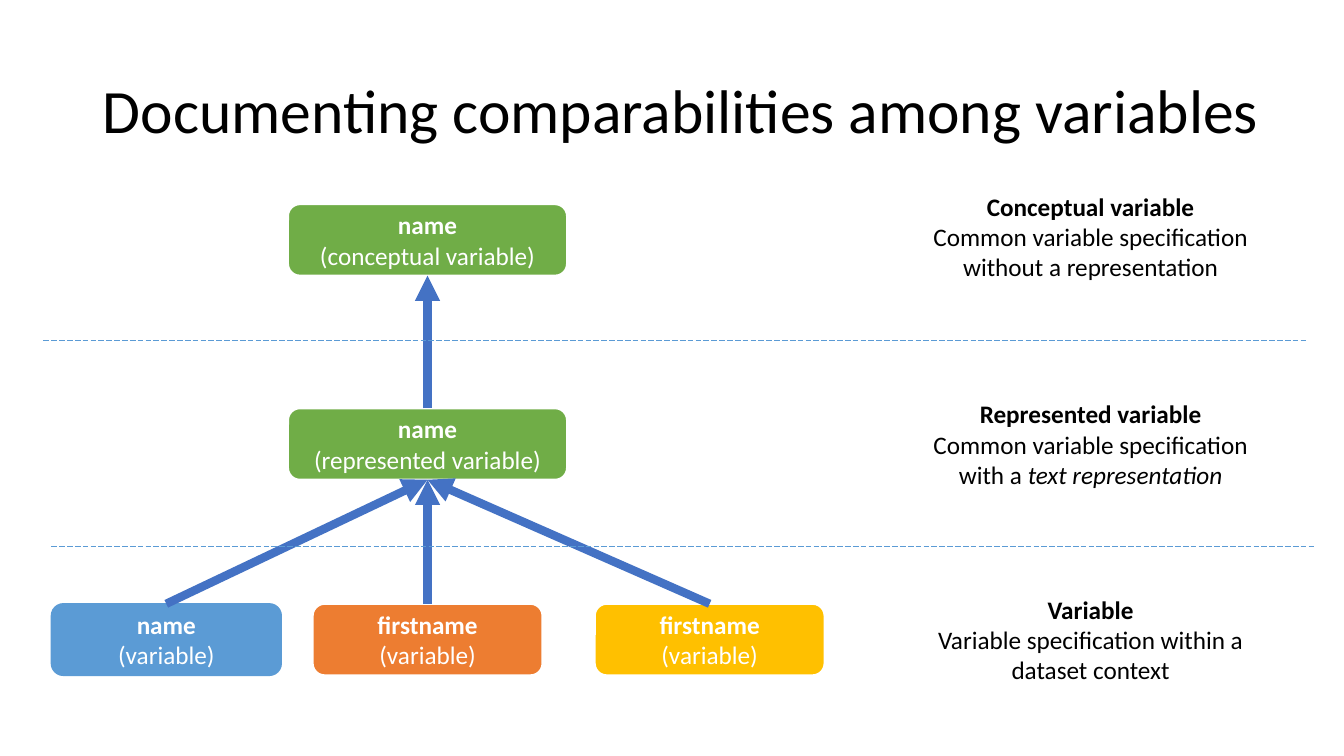
import pptx
import pptx.util
import pptx.dml.color
import pptx.enum.dml
import pptx.enum.shapes
import pptx.enum.text
import pptx.oxml.ns
import lxml.etree

Pt = pptx.util.Pt
CENTER = pptx.enum.text.PP_ALIGN.CENTER
MIDDLE = pptx.enum.text.MSO_ANCHOR.MIDDLE
TOP, BOTTOM = 0, 2
BOX_HEIGHT = 51.1
MAIN_CENTER = 305.4
VARIABLE_WIDTH = 164.2


def color(hex_string):
    return pptx.dml.color.RGBColor.from_string(hex_string)


def set_font(paragraph, size, hex_color):
    paragraph.font.name = "Calibri"
    paragraph.font.size = Pt(size)
    paragraph.font.color.rgb = color(hex_color)


def add_title(slide, text):
    title = slide.shapes.title
    title.left, title.top = Pt(66.2), Pt(28.8)
    title.width, title.height = Pt(853.2), Pt(104.4)
    frame = title.text_frame
    frame.text = text
    frame.word_wrap = True
    frame.auto_size = pptx.enum.text.MSO_AUTO_SIZE.NONE
    frame.vertical_anchor = MIDDLE
    paragraph = frame.paragraphs[0]
    paragraph.alignment = pptx.enum.text.PP_ALIGN.LEFT
    paragraph.line_spacing = 0.9
    set_font(paragraph, 44, "000000")


def write_entry(frame, heading, detail, hex_color, emphasis=""):
    frame.word_wrap = True
    frame.vertical_anchor = MIDDLE
    paragraph = frame.paragraphs[0]
    paragraph.alignment = CENTER
    set_font(paragraph, 18, hex_color)
    heading_run = paragraph.add_run()
    heading_run.text = heading
    heading_run.font.bold = True
    paragraph.add_line_break()
    paragraph.add_run().text = detail
    if emphasis:
        emphasis_run = paragraph.add_run()
        emphasis_run.text = emphasis
        emphasis_run.font.italic = True


def add_box(slide, center, top, width, name, kind, fill, outline="FFFFFF", weight=1.5):
    box = slide.shapes.add_shape(
        pptx.enum.shapes.MSO_SHAPE.ROUNDED_RECTANGLE,
        Pt(center - width / 2), Pt(top), Pt(width), Pt(BOX_HEIGHT))
    box.shadow.inherit = False
    box.fill.solid()
    box.fill.fore_color.rgb = color(fill)
    box.line.color.rgb = color(outline)
    box.line.width = Pt(weight)
    write_entry(box.text_frame, name, f"({kind})", "FFFFFF")
    return box


def add_explanation(slide, top, heading, detail, emphasis=""):
    explanation = slide.shapes.add_textbox(Pt(654.5), Pt(top), Pt(249.1), Pt(87.1))
    write_entry(explanation.text_frame, heading, detail, "000000", emphasis)


def add_line(slide, start, end, hex_color, weight):
    line = slide.shapes.add_connector(
        pptx.enum.shapes.MSO_CONNECTOR.STRAIGHT,
        Pt(start[0]), Pt(start[1]), Pt(end[0]), Pt(end[1]))
    line.line.color.rgb = color(hex_color)
    line.line.width = Pt(weight)
    lxml.etree.SubElement(line._element.spPr, pptx.oxml.ns.qn("a:effectLst"))
    return line


def add_arrow(slide, source, target):
    arrow = add_line(slide, (0, 0), (0, 0), "4472C4", 6)
    arrow.begin_connect(source, TOP)
    arrow.end_connect(target, BOTTOM)
    outline = arrow.line._get_or_add_ln()
    lxml.etree.SubElement(outline, pptx.oxml.ns.qn("a:tailEnd"), type="triangle")


def add_divider(slide, left, y):
    divider = add_line(slide, (left, y), (left + 902.9, y), "5B9BD5", 0.5)
    divider.line.dash_style = pptx.enum.dml.MSO_LINE.LONG_DASH


def main():
    presentation = pptx.Presentation()
    presentation.slide_width, presentation.slide_height = Pt(960), Pt(540)
    slide = presentation.slides.add_slide(presentation.slide_layouts[5])
    add_title(slide, "Documenting comparabilities among variables")

    conceptual, represented = [
        add_box(slide, MAIN_CENTER, top, 199.4, "name", kind, "70AD47")
        for top, kind in ((145.8, "conceptual variable"), (291.6, "represented variable"))]
    variables = [
        add_box(slide, center, 431.3, VARIABLE_WIDTH, name, "variable", fill, *outline)
        for center, name, fill, *outline in (
            (118.8, "name", "5B9BD5", "5B9BD5", 1),
            (MAIN_CENTER, "firstname", "ED7D31"),
            (506.9, "firstname", "FFC000"))]

    add_arrow(slide, represented, conceptual)
    for variable in variables:
        add_arrow(slide, variable, represented)

    add_divider(slide, 31, 243.4)
    add_divider(slide, 36.7, 390.2)

    add_explanation(slide, 125.3, "Conceptual variable",
                    "Common variable specification without a representation")
    add_explanation(slide, 273.6, "Represented variable",
                    "Common variable specification with a ", "text representation")
    add_explanation(slide, 413.3, "Variable",
                    "Variable specification within a dataset context")

    presentation.save("out.pptx")


if __name__ == "__main__":
    main()
